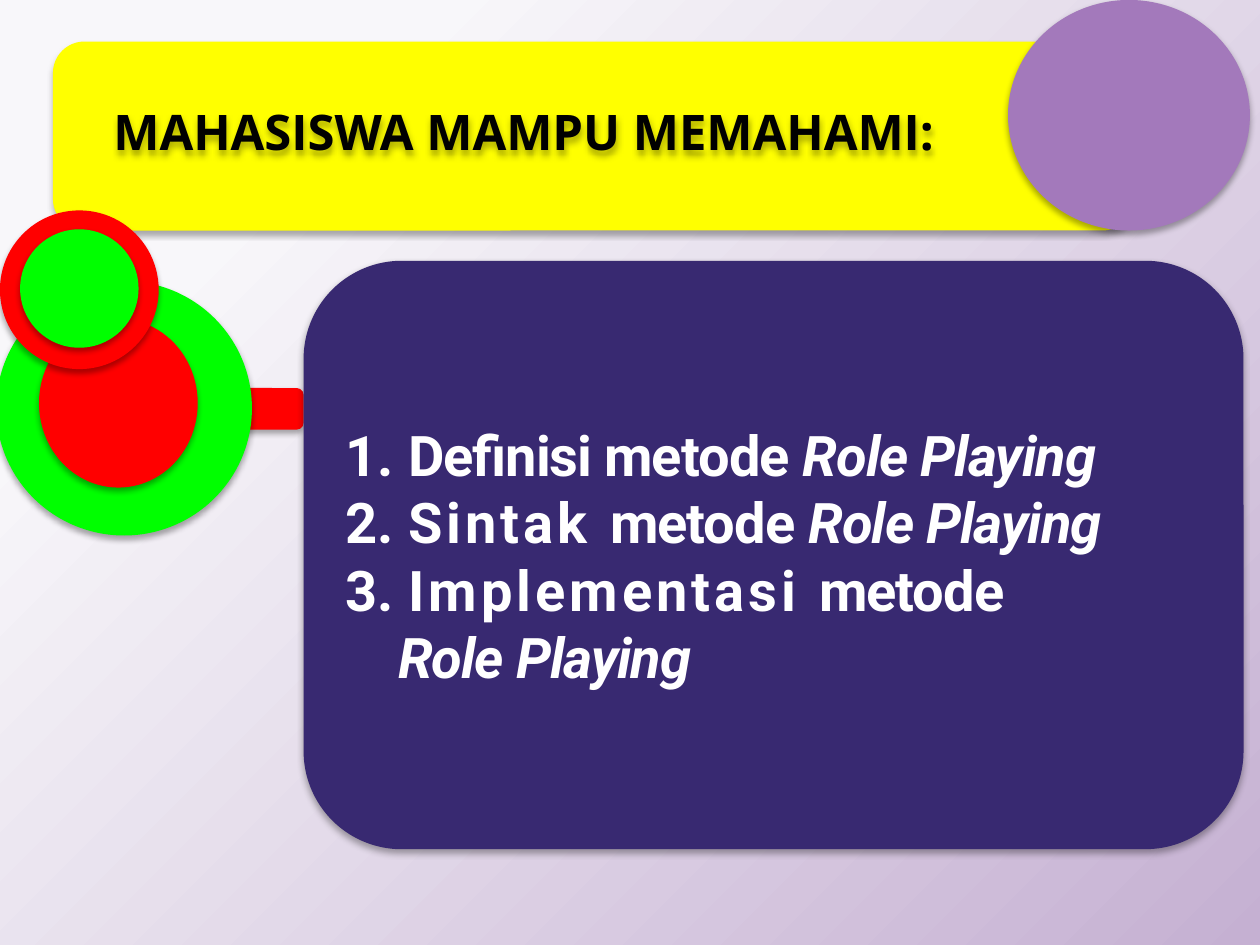
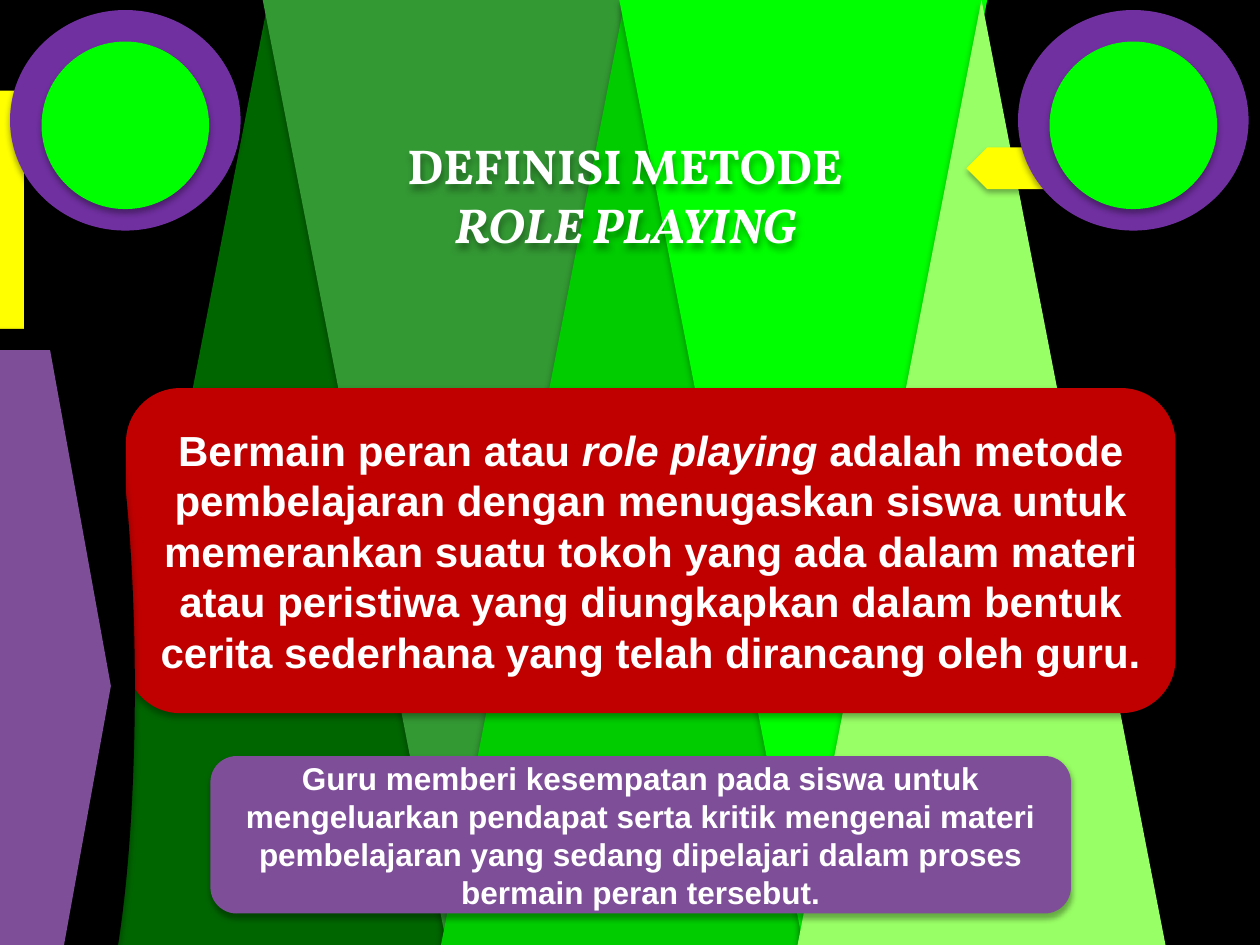
from lxml.etree import SubElement
from pptx import Presentation
from pptx.dml.color import RGBColor
from pptx.enum.shapes import MSO_SHAPE
from pptx.enum.text import MSO_ANCHOR, MSO_AUTO_SIZE, PP_ALIGN
from pptx.oxml.ns import qn
from pptx.util import Inches, Pt

# Colours
BLACK = RGBColor(0x00, 0x00, 0x00)
WHITE = RGBColor(0xFF, 0xFF, 0xFF)
YELLOW = RGBColor(0xFF, 0xFF, 0x00)
RED = RGBColor(0xFF, 0x00, 0x00)
LIME = RGBColor(0x00, 0xFF, 0x00)
DARK_RED = RGBColor(0xC0, 0x00, 0x00)
NAVY = RGBColor(0x38, 0x29, 0x71)
LILAC = RGBColor(0xA3, 0x79, 0xBB)
PURPLE = RGBColor(0x7E, 0x4E, 0x99)
VIOLET = RGBColor(0x70, 0x30, 0xA0)
MIST = RGBColor(0xF8, 0xF7, 0xFA)
LAVENDER = RGBColor(0xC5, 0xB0, 0xD2)
BEAM_COLOURS = [RGBColor(0x00, 0x66, 0x00), RGBColor(0x33, 0x99, 0x33),
                RGBColor(0x00, 0xCC, 0x00), LIME, RGBColor(0x99, 0xFF, 0x66)]

# Content: a line is a list of (text, italic, letter spacing in points)
TIGHT, LOOSE = -0.6, 2.3
GOALS_TITLE = [[("MAHASISWA MAMPU MEMAHAMI:", False, 0)]]
GOALS = [
    [("Definisi metode ", False, TIGHT), ("Role Playing", True, TIGHT)],
    [("Sintak ", False, LOOSE), ("metode ", False, TIGHT), ("Role Playing", True, TIGHT)],
    [("Implementasi ", False, LOOSE), ("metode", False, TIGHT)],
    [("Role Playing", True, TIGHT)],
]
NUMBERED_GOALS = 3
DEFINITION_TITLE = [[("DEFINISI METODE", False, 0)], [("ROLE PLAYING", True, 0)]]
DEFINITION = [[
    ("Bermain peran atau ", False, 0),
    ("role playing ", True, 0),
    ("adalah metode pembelajaran dengan menugaskan siswa untuk memerankan suatu "
     "tokoh yang ada dalam materi atau peristiwa yang diungkapkan dalam bentuk "
     "cerita sederhana yang telah dirancang oleh guru.", False, 0),
]]
TEACHER_ROLE = [[
    ("Guru memberi kesempatan pada siswa untuk mengeluarkan pendapat serta kritik "
     "mengenai materi pembelajaran yang sedang dipelajari dalam proses bermain "
     "peran tersebut.", False, 0),
]]

# Decoration: left, top, width, height, colour
GOAL_RINGS = [
    (-0.03, 2.23, 2.03, 2.02, LIME),
    (0.31, 2.53, 1.26, 1.34, RED),
    (0, 1.67, 1.26, 1.26, RED),
    (0.16, 1.82, 0.94, 0.94, LIME),
]
SIDE_TAB = [
    (MSO_SHAPE.ROUNDED_RECTANGLE, (-0.14, 0.72, 0.33, 2.33), YELLOW),
    (MSO_SHAPE.FLOWCHART_TERMINATOR, (-1.67, 2.61, 2.74, 5.7), BLACK),
    (MSO_SHAPE.FLOWCHART_PREPARATION, (-1.53, 2.78, 2.41, 5.33), PURPLE),
]


def add_shadow(shape):
    """Give a shape the soft downward shadow used throughout."""
    shape.shadow.inherit = False
    effects = shape.element.spPr.find(qn("a:effectLst"))
    outer = SubElement(effects, qn("a:outerShdw"), blurRad=str(Pt(3.5)),
                       dist=str(Pt(2.2)), dir="5400000", rotWithShape="0")
    colour = SubElement(outer, qn("a:srgbClr"), val=str(BLACK))
    SubElement(colour, qn("a:alpha"), val="32000")


def add_block(page, kind, bounds, colour, rotation=0):
    shape = page.shapes.add_shape(kind, *map(Inches, bounds))
    shape.fill.solid()
    shape.fill.fore_color.rgb = colour
    shape.line.fill.background()
    shape.rotation = rotation
    add_shadow(shape)
    return shape


def write_lines(shape, lines, font, size, colour, align):
    frame = shape.text_frame
    frame.word_wrap = True
    frame.auto_size = MSO_AUTO_SIZE.NONE
    frame.vertical_anchor = MSO_ANCHOR.MIDDLE
    for number, line in enumerate(lines):
        para = frame.add_paragraph() if number else frame.paragraphs[0]
        para.alignment = align
        para.space_before = Pt(0)
        for text, italic, spacing in line:
            span = para.add_run()
            span.text = text
            span.font.name, span.font.size = font, Pt(size)
            span.font.bold, span.font.italic = True, italic
            span.font.color.rgb = colour
            if spacing:
                span.font._element.set("spc", str(round(spacing * 100)))


def place_on_top(page, placeholder, bounds):
    """Move a placeholder and bring it in front of the shapes drawn so far."""
    placeholder.left, placeholder.top, placeholder.width, placeholder.height = map(Inches, bounds)
    page.shapes.element.append(placeholder.element)


def add_title(page, bounds, lines, font, colour, align):
    title = page.shapes.title
    place_on_top(page, title, bounds)
    write_lines(title, lines, font, 28, colour, align)
    title.fill.background()
    add_shadow(title)


def add_page(deck, layout):
    page = deck.slides.add_slide(deck.slide_layouts[layout])
    page.background.fill.solid()
    page.background.fill.fore_color.rgb = BLACK
    return page


def add_glow(page):
    """Cover the page with a gradient that spreads from the top left corner."""
    glow = add_block(page, MSO_SHAPE.RECTANGLE, (0, 0, 10, 7.5), MIST)
    glow.fill.gradient()
    for stop, position, colour in zip(glow.fill.gradient_stops, (0.2, 1), (MIST, LAVENDER)):
        stop.position = position
        stop.color.rgb = colour
    gradient = glow.element.spPr.find(qn("a:gradFill"))
    linear = gradient.find(qn("a:lin"))
    circle = SubElement(gradient, qn("a:path"), {"path": "circle"})
    SubElement(circle, qn("a:fillToRect"), l="-15000", t="-15000", r="115000", b="115000")
    gradient.replace(linear, circle)


def build_goals(deck):
    page = add_page(deck, 1)
    add_glow(page)

    # Title band
    add_block(page, MSO_SHAPE.ROUNDED_RECTANGLE, (0.42, 0.33, 8.58, 1.5), YELLOW)
    add_block(page, MSO_SHAPE.OVAL, (8, 0, 1.92, 1.83), LILAC)
    add_title(page, (0.8, 0.29, 8.75, 1.5), GOALS_TITLE, "Open Sans", BLACK, PP_ALIGN.LEFT)

    # Rings and the link to the panel
    add_block(page, MSO_SHAPE.ROUNDED_RECTANGLE, (1.83, 3.08, 0.58, 0.33), RED)
    for *bounds, colour in GOAL_RINGS:
        add_block(page, MSO_SHAPE.OVAL, bounds, colour)

    # Panel with the numbered list
    add_block(page, MSO_SHAPE.ROUNDED_RECTANGLE, (2.41, 2.07, 7.46, 4.67), NAVY)
    body = page.placeholders[1]
    place_on_top(page, body, (2.64, 2.3, 7, 4.21))
    write_lines(body, GOALS, "Roboto", 32, WHITE, PP_ALIGN.LEFT)
    for number, para in enumerate(body.text_frame.paragraphs):
        numbered = number < NUMBERED_GOALS
        properties = para._p.get_or_add_pPr()
        properties.set("marL", str(Inches(0.5 if numbered else 0.42)))
        properties.set("indent", str(Inches(-0.5 if numbered else 0)))
        if numbered:
            SubElement(properties, qn("a:buFont"), typeface="+mj-lt")
            SubElement(properties, qn("a:buAutoNum"), type="arabicPeriod")
        else:
            SubElement(properties, qn("a:buNone"))


def build_definition(deck):
    page = add_page(deck, 5)

    # Beams, every second one upside down
    for number, colour in enumerate(BEAM_COLOURS):
        bounds = (0.67 + number * 1.415, 0, 2.92, 7.5)
        add_block(page, MSO_SHAPE.ISOSCELES_TRIANGLE, bounds, colour, 180 * (number % 2))

    # Text panels
    for bounds, colour, lines, size in [
        ((1, 3.08, 8.33, 2.58), DARK_RED, DEFINITION, 24),
        ((1.67, 6, 6.83, 1.25), PURPLE, TEACHER_ROLE, 18),
    ]:
        panel = add_block(page, MSO_SHAPE.ROUNDED_RECTANGLE, bounds, colour)
        write_lines(panel, lines, "Arial", size, WHITE, PP_ALIGN.CENTER)

    # Side tab, title, arrow and corner rings
    for kind, bounds, colour in SIDE_TAB:
        add_block(page, kind, bounds, colour)
    add_title(page, (1.17, 0.67, 7.58, 1.75), DEFINITION_TITLE, "Vollkorn", WHITE,
              PP_ALIGN.CENTER)
    add_block(page, MSO_SHAPE.PENTAGON, (7.67, 1.17, 0.67, 0.33), YELLOW, 180)
    for left in (0.08, 8.08):
        add_block(page, MSO_SHAPE.OVAL, (left, 0.08, 1.83, 1.75), VIOLET)
        add_block(page, MSO_SHAPE.OVAL, (left + 0.25, 0.33, 1.33, 1.33), LIME)


def main():
    deck = Presentation()
    deck.slide_width, deck.slide_height = Inches(10), Inches(7.5)
    build_goals(deck)
    build_definition(deck)
    deck.save("out.pptx")


if __name__ == "__main__":
    main()
